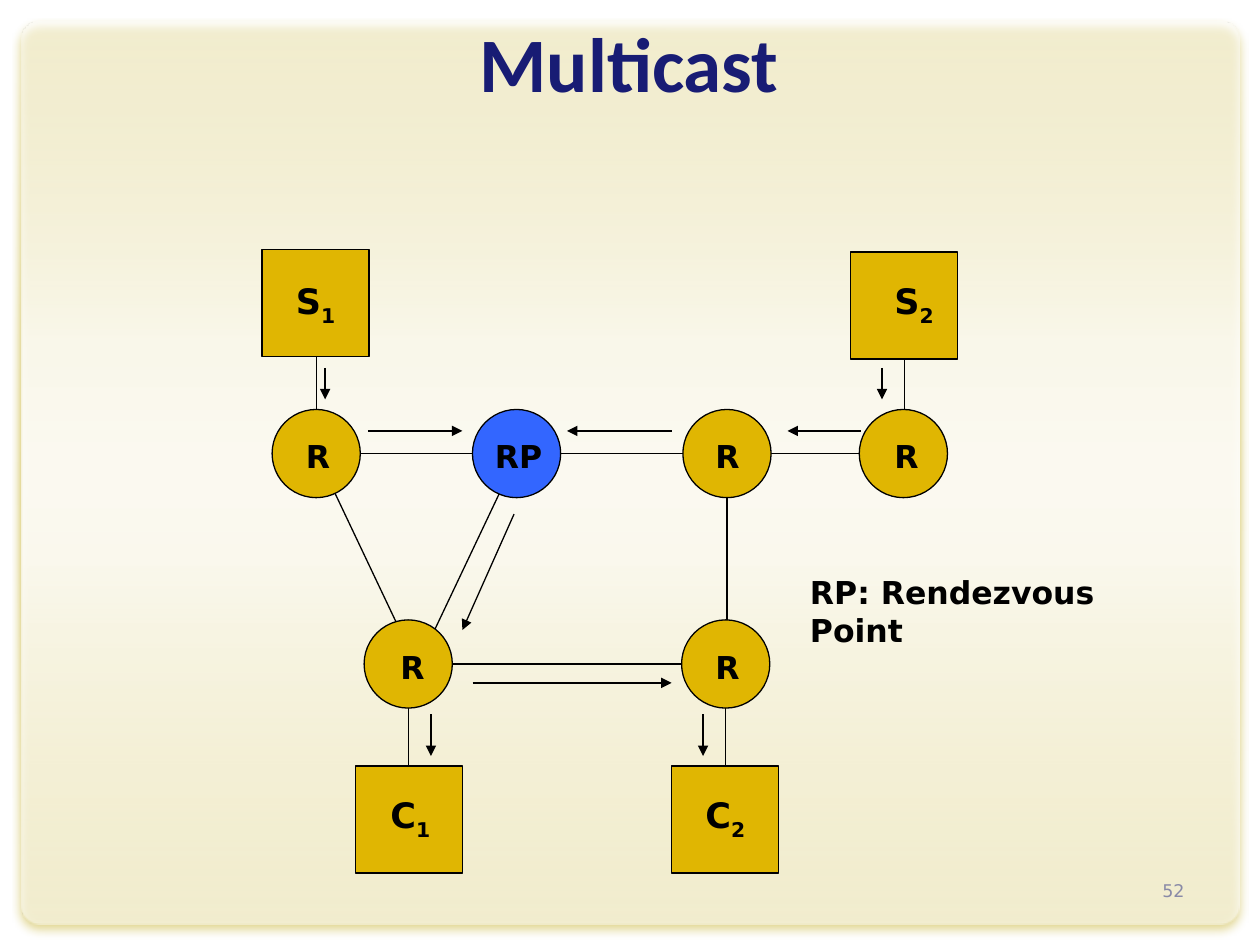
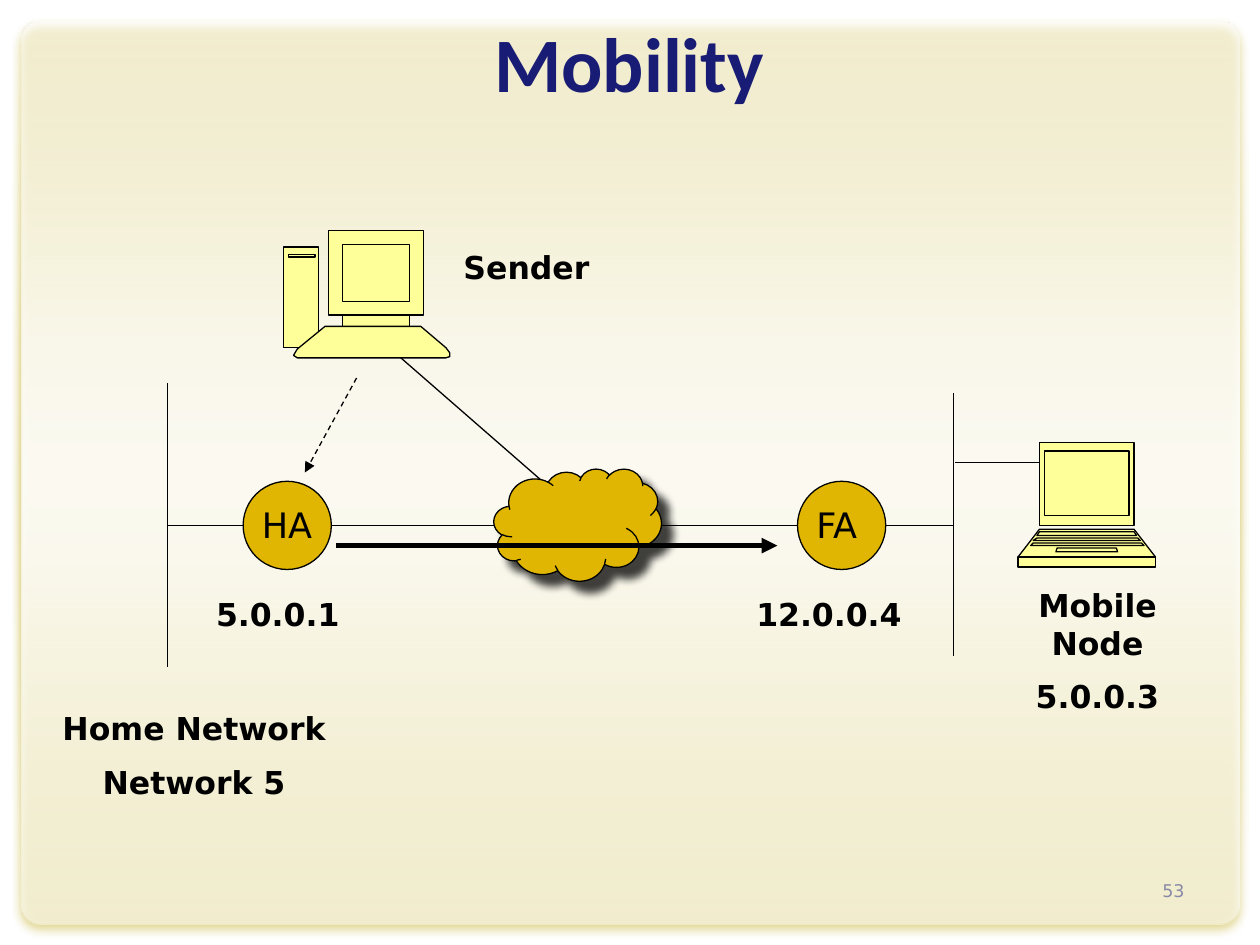
from lxml import etree
from pptx import Presentation, util as u
from pptx.dml.color import RGBColor
from pptx.enum import dml, shapes, text
from pptx.oxml import parse_xml
from pptx.oxml.ns import qn

NS = "http://schemas.openxmlformats.org/drawingml/2006/main"
GOLD, BLUE, CREAM, BLACK = "E0B602", "3366FF", "FFFF99", "000000"
NAVY, GRAY, PANEL_SHADOW = "181C74", "898AA7", "C5AF25"
HEAD = "DejaVu Sans"
TITLE = {"name": "Calibri", "size": u.Pt(44), "bold": True}
LABEL = {"name": HEAD, "size": u.Pt(18), "bold": True}
HOST = {"name": HEAD, "size": u.Pt(20), "bold": True}
AGENT = {"name": HEAD, "size": u.Pt(20), "bold": False}
NUMBER = {"name": HEAD, "size": u.Pt(10), "bold": False}
CENTER, RIGHT, LEFT = text.PP_ALIGN.CENTER, text.PP_ALIGN.RIGHT, text.PP_ALIGN.LEFT
PANEL_STOPS = [(0, 50), (35, 87), (50, 92), (60, 89), (100, 55)]
CIRCLE, BOX = 0.7, 0.85


def color(value):
    """Turn a hex string into a colour."""
    return RGBColor.from_string(value)


def inches(*values):
    """Turn numbers into lengths."""
    return [u.Inches(v) for v in values]


def add_shadow(sp, value, alpha, blur, dist, angle):
    """Give a shape an outer shadow."""
    effects = sp._element.spPr.find(qn("a:effectLst"))
    effects.append(parse_xml(
        f'<a:outerShdw xmlns:a="{NS}" blurRad="{u.Pt(blur)}" dist="{u.Pt(dist)}" '
        f'dir="{angle * 60000}" algn="ctr" rotWithShape="0"><a:srgbClr val="{value}">'
        f'<a:alpha val="{alpha * 1000}"/></a:srgbClr></a:outerShdw>'))


def style(sp, fill):
    """Fill a shape and outline it in black."""
    sp.shadow.inherit = False
    sp.fill.solid()
    sp.fill.fore_color.rgb = color(fill)
    sp.line.color.rgb = color(BLACK)
    sp.line.width = u.Pt(0.75)
    return sp


def add_preset(s, kind, x, y, w, h, fill=GOLD):
    """Draw an outlined preset shape."""
    return style(s.shapes.add_shape(kind, *inches(x, y, w, h)), fill)


def add_circle(s, x, y, fill=GOLD):
    """Draw a router or agent."""
    return add_preset(s, shapes.MSO_SHAPE.OVAL, x, y, CIRCLE, CIRCLE, fill)


def add_polygons(s, outlines):
    """Draw a group of closed outlines, back to front."""
    group = s.shapes.add_group_shape()
    for points in outlines:
        start, *rest = [tuple(inches(*point)) for point in points]
        builder = group.shapes.build_freeform(*start)
        builder.add_line_segments(rest, close=True)
        style(builder.convert_to_shape(), CREAM)


def rect(x1, y1, x2, y2):
    """Give the corners of a rectangle."""
    return [(x1, y1), (x2, y1), (x2, y2), (x1, y2)]


def trapezoid(x1, x2, y1, x3, x4, y2):
    """Give the corners of a trapezoid from its top and bottom edges."""
    return [(x1, y1), (x2, y1), (x4, y2), (x3, y2)]


def add_line(s, x1, y1, x2, y2, arrow=False, width=0.75, dashed=False):
    """Draw a link, or an arrow for the flow along it."""
    line = s.shapes.add_connector(shapes.MSO_CONNECTOR.STRAIGHT, *inches(x1, y1, x2, y2))
    line.line.color.rgb = color(BLACK)
    line.line.width = u.Pt(width)
    if dashed:
        line.line.dash_style = dml.MSO_LINE.DASH
    if arrow:
        etree.SubElement(line.line._get_or_add_ln(), qn("a:tailEnd"), type="triangle")
    etree.SubElement(line._element.spPr, qn("a:effectLst"))


def add_text(s, x, y, w, h, lines, font, fill=BLACK, align=LEFT, sub="",
             anchor=text.MSO_ANCHOR.TOP):
    """Write paragraphs, the last of which may end in a subscript."""
    tf = s.shapes.add_textbox(*inches(x, y, w, h)).text_frame
    tf.word_wrap = True
    tf.vertical_anchor = anchor
    for i, line in enumerate(lines):
        p = tf.add_paragraph() if i else tf.paragraphs[0]
        p.alignment = align
        if i:
            p.space_before = u.Pt(9)
        pieces = [line, sub] if sub and line is lines[-1] else [line]
        for piece in pieces:
            r = p.add_run()
            r.text = piece
            for key, value in font.items():
                setattr(r.font, key, value)
            r.font.color.rgb = color(fill)
            if piece is sub:
                r.font._element.set("baseline", "-25000")
    return tf


def add_panel(s):
    """Draw the translucent panel behind the content."""
    sp = s.shapes.add_shape(shapes.MSO_SHAPE.ROUNDED_RECTANGLE, *inches(0.17, 0.17, 9.67, 7.17))
    sp.adjustments[0] = 0.022
    sp.line.fill.background()
    sp.shadow.inherit = False
    stops = "".join(
        f'<a:gs pos="{pos * 1000}"><a:srgbClr val="FFFFFF"><a:alpha val="{alpha * 1000}"/>'
        f'</a:srgbClr></a:gs>' for pos, alpha in PANEL_STOPS)
    sp._element.spPr.find(qn("a:prstGeom")).addnext(parse_xml(
        f'<a:gradFill xmlns:a="{NS}" rotWithShape="1"><a:gsLst>{stops}</a:gsLst>'
        f'<a:lin ang="5400000" scaled="0"/></a:gradFill>'))
    add_shadow(sp, PANEL_SHADOW, 90, 5, 3.6, 90)


def add_slide(prs, title, number):
    """Add a slide with its panel, title and number."""
    s = prs.slides.add_slide(prs.slide_layouts[6])
    add_panel(s)
    tf = add_text(s, 0.33, 0.25, 9.33, 1.17, [title], TITLE, NAVY, CENTER)
    tf.paragraphs[0].line_spacing = u.Pt(40)
    add_text(s, 7.17, 6.8, 2.33, 0.4, [number], NUMBER, GRAY, RIGHT,
             anchor=text.MSO_ANCHOR.BOTTOM)
    return s


def build_multicast(prs):
    """Show the multicast tree through the rendezvous point."""
    s = add_slide(prs, "Multicast", "52")
    links = [(2.51, 2.58, 2.51, 3.5), (7.18, 2.67, 7.18, 3.5), (3.24, 5.33, 3.24, 6.42),
             (5.76, 5.33, 5.76, 6.42), (3.25, 5.27, 5.5, 5.27), (5.77, 3.58, 5.77, 5.25),
             (4.08, 3.67, 3.25, 5.42), (2.5, 3.58, 3.33, 5.33), (2.5, 3.6, 7.42, 3.6)]
    for link in links:
        add_line(s, *link)
    routers = [(2.16, 3.25, "R", 2.33), (3.75, 3.25, "RP", 3.83), (5.42, 3.25, "R", 5.58),
               (6.82, 3.25, "R", 7), (2.89, 4.92, "R", 3.08), (5.41, 4.92, "R", 5.58)]
    for x, y, name, label_x in routers:
        add_circle(s, x, y, BLUE if name == "RP" else GOLD)
        add_text(s, label_x, y + 0.17, 0.75 if name == "RP" else 0.33, 0.51, [name], LABEL)
    hosts = [(2.08, 1.98, "S", "1", 2.25, 2.17), (6.75, 2, "S", "2", 7, 2.17),
             (2.82, 6.08, "C", "1", 3, 6.25), (5.33, 6.08, "C", "2", 5.5, 6.25)]
    for x, y, name, sub, label_x, label_y in hosts:
        add_preset(s, shapes.MSO_SHAPE.RECTANGLE, x, y, BOX, BOX)
        add_text(s, label_x, label_y, 0.67, 0.43, [name], HOST, sub=sub)
    flows = [(2.58, 2.92, 2.58, 3.17), (2.92, 3.42, 3.67, 3.42), (5.33, 3.42, 4.5, 3.42),
             (6.83, 3.42, 6.25, 3.42), (7, 2.92, 7, 3.17), (4.08, 4.08, 3.67, 5),
             (3.42, 5.67, 3.42, 6), (3.75, 5.42, 5.33, 5.42), (5.58, 5.67, 5.58, 6)]
    for flow in flows:
        add_line(s, *flow, arrow=True)
    add_text(s, 6.33, 4.5, 3.25, 0.91, ["RP: Rendezvous Point"], LABEL)


def add_laptop(s):
    """Draw the mobile node."""
    add_polygons(s, [
        rect(8.25, 3.51, 9, 4.17), rect(8.29, 3.58, 8.96, 4.09),
        trapezoid(8.25, 9, 4.2, 8.08, 9.17, 4.42), rect(8.08, 4.42, 9.17, 4.5),
        trapezoid(8.25, 9, 4.22, 8.23, 9.02, 4.25),
        trapezoid(8.23, 9.03, 4.27, 8.2, 9.05, 4.29),
        trapezoid(8.2, 9.06, 4.31, 8.18, 9.08, 4.33),
        trapezoid(8.39, 8.86, 4.35, 8.38, 8.87, 4.38)])


def add_desktop(s):
    """Draw the sender."""
    keyboard = [(2.58, 2.59), (3.34, 2.59), (3.54, 2.76), (3.57, 2.8), (3.57, 2.83),
                (3.54, 2.84), (2.36, 2.84), (2.33, 2.82), (2.36, 2.77)]
    add_polygons(s, [
        rect(2.25, 1.96, 2.53, 2.76), rect(2.29, 2.02, 2.5, 2.04),
        rect(2.61, 1.83, 3.36, 2.5), rect(2.72, 1.94, 3.25, 2.39),
        rect(2.72, 2.5, 3.25, 2.59), keyboard])


def build_mobility(prs):
    """Show forwarding from the home agent to the foreign agent."""
    s = add_slide(prs, "Mobility", "53")
    links = [(8.42, 3.67, 7.58, 3.67), (3.17, 2.83, 4.42, 3.92), (1.33, 4.17, 2.08, 4.17),
             (7.57, 4.17, 6.57, 4.17), (2.58, 4.17, 4.42, 4.17), (5.17, 4.17, 6.33, 4.17),
             (1.33, 3.04, 1.33, 5.29), (7.57, 3.12, 7.57, 5.21)]
    for link in links:
        add_line(s, *link)
    cloud = add_preset(s, shapes.MSO_SHAPE.CLOUD, 3.92, 3.72, 1.33, 0.89)
    add_shadow(cloud, BLACK, 75, 5, 8.5, 45)
    for x, name in [(1.93, "HA"), (6.33, "FA")]:
        add_circle(s, x, 3.82)
        add_text(s, x + 0.05, 3.95, 0.69, 0.43, [name], AGENT)
    add_laptop(s)
    add_desktop(s)
    add_line(s, 2.83, 3, 2.42, 3.75, arrow=True, dashed=True)
    add_line(s, 2.67, 4.33, 6.17, 4.33, arrow=True, width=3)
    labels = [(0.25, 5.58, 2.58, 1.11, ["Home Network", "Network 5"]),
              (1.58, 4.67, 1.25, 0.51, ["5.0.0.1"]),
              (5.83, 4.67, 1.5, 0.51, ["12.0.0.4"]),
              (7.75, 4.6, 1.92, 1.51, ["Mobile Node", "5.0.0.3"])]
    for *place, lines in labels:
        add_text(s, *place, lines, LABEL, align=CENTER)
    add_text(s, 3.58, 1.92, 1.25, 0.51, ["Sender"], LABEL)


def main():
    """Build and save the slides."""
    prs = Presentation()
    prs.slide_width, prs.slide_height = inches(10, 7.5)
    build_multicast(prs)
    build_mobility(prs)
    prs.save("out.pptx")


if __name__ == "__main__":
    main()
